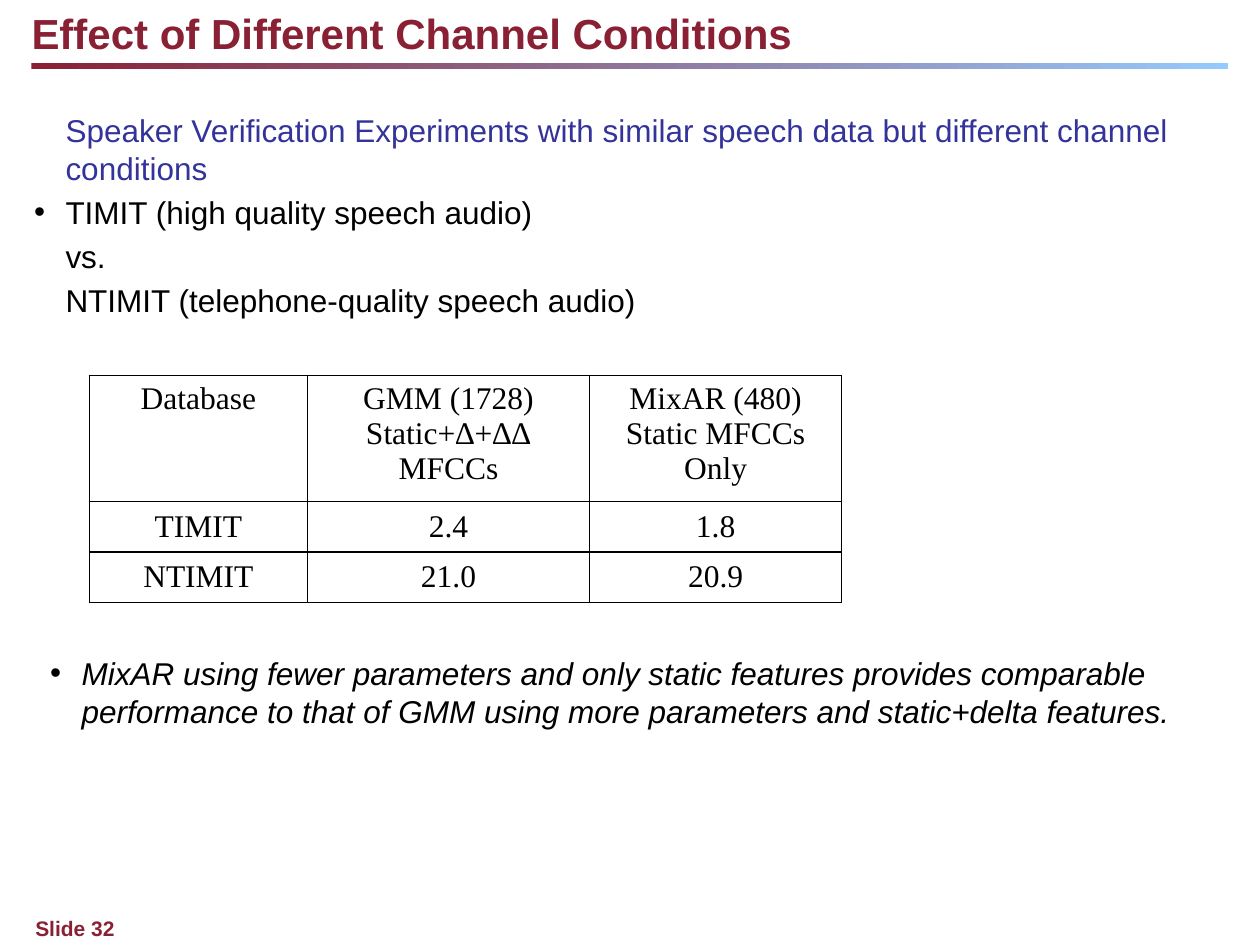
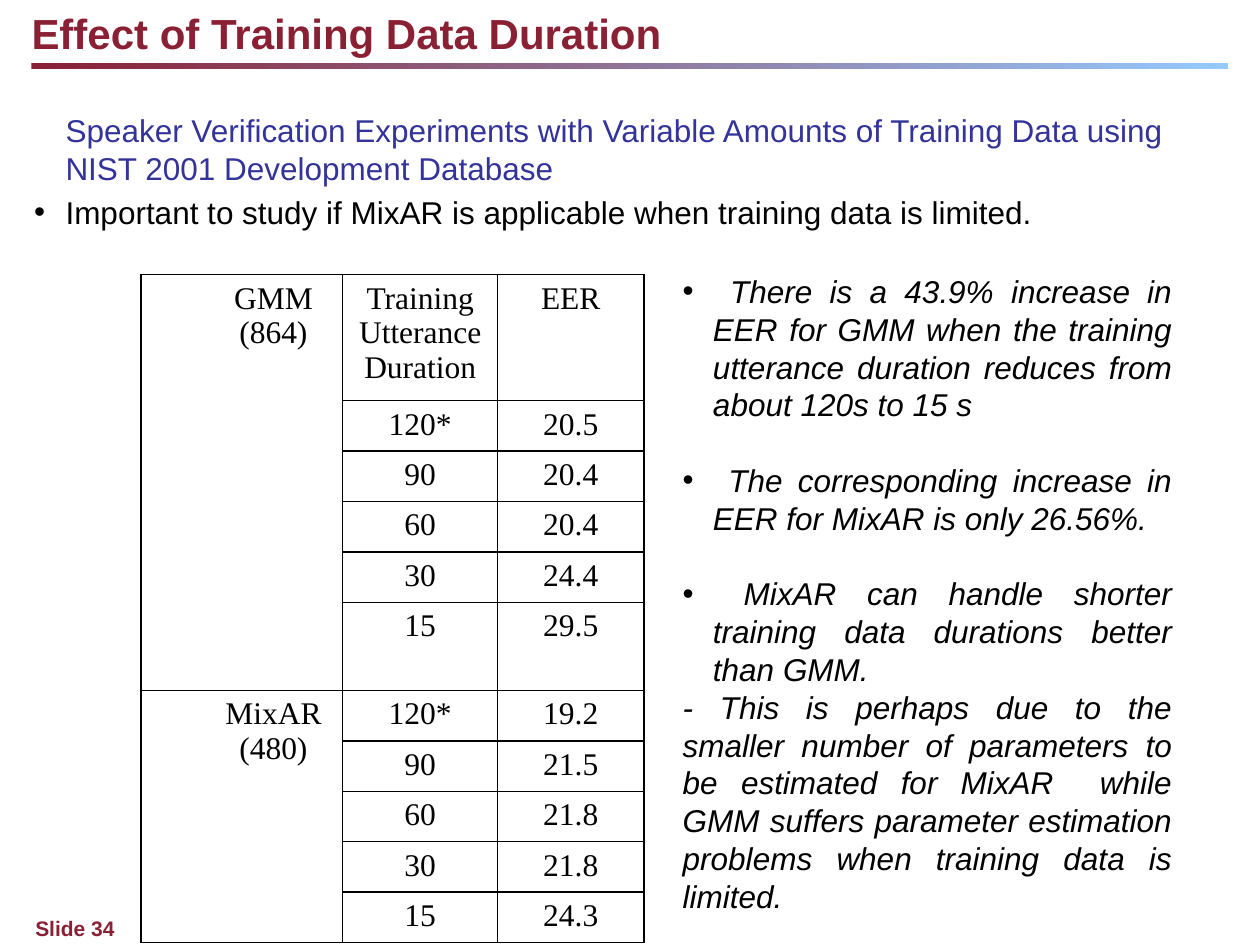
from lxml import etree
from pptx import Presentation
from pptx import util as u
from pptx.dml.color import RGBColor
from pptx.enum import shapes, text
from pptx.oxml import ns

COLORS = {"maroon": "892034", "sky": "95CAFF", "indigo": "333399", "ink": "000000"}
TITLE = {"name": "Arial", "size": u.Pt(24), "bold": True, "color": "maroon"}
FOOTER = {**TITLE, "size": u.Pt(12)}
BODY = {"name": "Arial", "size": u.Pt(18), "color": "ink"}
LEAD = {**BODY, "color": "indigo"}
REMARK = {**BODY, "italic": True}
CELL = {**BODY, "name": "Times New Roman"}
CENTER, JUSTIFY = text.PP_ALIGN.CENTER, text.PP_ALIGN.JUSTIFY


def rgb(name):
    return RGBColor.from_string(COLORS[name])


def style(para, font):
    for span in para.runs:
        for key, value in font.items():
            if key == "color":
                span.font.color.rgb = rgb(value)
            else:
                setattr(span.font, key, value)


def place(shape, box):
    for key, value in zip(("left", "top", "width", "height"), box):
        setattr(shape, key, u.Inches(value))


def set_indent(para, margin, first=0, bullet=False):
    props = para._p.get_or_add_pPr()
    props.set("marL", str(u.Inches(margin)))
    props.set("indent", str(u.Inches(first)))
    if bullet:
        face = etree.SubElement(props, ns.qn("a:buFont"))
        face.set("typeface", "Arial")
        etree.SubElement(props, ns.qn("a:buChar")).set("char", "•")
    else:
        etree.SubElement(props, ns.qn("a:buNone"))


def fill_text(shape, items, inset=True, hang=0.25, gap=0, align=None):
    """Each item is (words, font, kind, space before or None for the gap)."""
    frame = shape.text_frame
    options = {"word_wrap": True, "auto_size": text.MSO_AUTO_SIZE.NONE,
               "vertical_anchor": text.MSO_ANCHOR.TOP}
    if not inset:
        options.update({f"margin_{side}": 0 for side in ("left", "top", "right", "bottom")})
    for key, value in options.items():
        setattr(frame, key, value)
    for index, (words, font, kind, before) in enumerate(items):
        para = frame.add_paragraph() if index else frame.paragraphs[0]
        para.text = words
        bullet = kind == "bullet"
        set_indent(para, 0 if kind == "plain" else hang, -hang if bullet else 0, bullet)
        space = gap if before is None else before
        para.space_before = u.Pt(space if index else 0)
        para.alignment = align or text.PP_ALIGN.LEFT
        style(para, font)


def add_text(page, box, items, **options):
    shape = page.shapes.add_textbox(*(u.Inches(value) for value in box))
    fill_text(shape, items, **options)


def add_page(deck, title, number, intro, intro_height):
    """Title, gradient rule, opening list and footer shared by the slides."""
    page = deck.slides.add_slide(deck.slide_layouts[1])
    rule = page.shapes.add_shape(shapes.MSO_SHAPE.RECTANGLE, *map(u.Inches, (0.25, 0.5, 9.5, 0.05)))
    rule.shadow.inherit = False
    rule.line.fill.background()
    rule.fill.gradient()
    rule.fill.gradient_angle = 0
    for stop, name in zip(rule.fill.gradient_stops, ("maroon", "sky")):
        stop.color.rgb = rgb(name)

    heading, body = page.shapes.title, page.placeholders[1]
    place(heading, (0.25, 0.06, 9.42, 0.4))
    fill_text(heading, [(title, TITLE, "plain", 0)], inset=False)
    place(body, (0.27, 0.88, 9.44, intro_height))
    fill_text(body, intro, inset=False, gap=3.6)
    add_text(page, (0.28, 7.27, 8.92, 0.2),
             [(f"Slide {number}", FOOTER, "plain", 0)], inset=False)
    return page


def border(cell):
    props = cell._tc.get_or_add_tcPr()
    for index, side in enumerate(("lnL", "lnR", "lnT", "lnB")):
        line = etree.Element(ns.qn(f"a:{side}"), w=str(u.Pt(1)))
        solid = etree.SubElement(line, ns.qn("a:solidFill"))
        etree.SubElement(solid, ns.qn("a:srgbClr")).set("val", COLORS["ink"])
        props.insert(index, line)


def add_grid(page, left, top, widths, heights, rows, middle_from=None):
    """Ruled table; None leaves a cell empty for a merge."""
    frame = page.shapes.add_table(len(rows), len(widths), u.Inches(left), u.Inches(top),
                                  u.Inches(sum(widths)), u.Inches(sum(heights)))
    table = frame.table
    table.first_row = table.horz_banding = False
    for column, width in zip(table.columns, widths):
        column.width = u.Inches(width)
    for r, (height, row) in enumerate(zip(heights, rows)):
        table.rows[r].height = u.Inches(height)
        for c, words in enumerate(row):
            cell = table.cell(r, c)
            cell.fill.background()
            border(cell)
            if middle_from is not None and r >= middle_from:
                cell.vertical_anchor = text.MSO_ANCHOR.MIDDLE
            if words is None:
                continue
            cell.text = words
            for para in cell.text_frame.paragraphs:
                para.alignment = CENTER
                style(para, CELL)
    return table


def channel_slide(deck):
    page = add_page(deck, "Effect of Different Channel Conditions", 32, [
        ("Speaker Verification Experiments with similar speech data but different "
         "channel conditions", LEAD, "hung", None),
        ("TIMIT (high quality speech audio)", BODY, "bullet", None),
        ("vs.", BODY, "hung", None),
        ("NTIMIT (telephone-quality speech audio)", BODY, "hung", None)], 1.68)
    # Error rates by database
    add_grid(page, 0.71, 2.98, (1.73, 2.24, 2), (1, 0.4, 0.4), [
        ("Database", "GMM (1728)\vStatic+∆+∆∆ MFCCs", "MixAR (480)\vStatic MFCCs Only"),
        ("TIMIT", "2.4", "1.8"),
        ("NTIMIT", "21.0", "20.9")], middle_from=1)
    # Conclusion
    add_text(page, (0.3, 5.14, 9.12, 0.71), [
        ("MixAR using fewer parameters and only static features provides comparable "
         "performance to that of GMM using more parameters and static+delta features.",
         REMARK, "bullet", 0)])


def duration_slide(deck):
    page = add_page(deck, "Effect of Training Data Duration", 34, [
        ("Speaker Verification Experiments with Variable Amounts of Training Data using "
         "NIST 2001 Development Database", LEAD, "hung", None),
        ("Important to study if MixAR is applicable when training data is limited.",
         BODY, "bullet", None)], 1.33)
    # Error rates by model and utterance duration
    durations = ("120*", "90", "60", "30", "15")
    rates = {"GMM\n(864)": ("20.5", "20.4", "20.4", "24.4", "29.5"),
             "MixAR\n(480)": ("19.2", "21.5", "21.8", "21.8", "24.3")}
    rows = [[None, "Training Utterance Duration", "EER"]]
    starts = []
    for model, values in rates.items():
        starts.append(len(rows) if starts else 0)
        rows += [[None, *pair] for pair in zip(durations, values)]
        rows[starts[-1]][0] = model
    heights = [1] + [0.4] * 4 + [0.7] + [0.4] * 5
    table = add_grid(page, 1.12, 2.18, (1.6, 1.23, 1.16), heights, rows)
    for first, last in zip(starts, (starts[1] - 1, len(rows) - 1)):
        model_cell = table.cell(first, 0)
        model_cell.merge(table.cell(last, 0))
        for para in model_cell.text_frame.paragraphs:
            set_indent(para, 0, 0.5)
    # Findings
    add_text(page, (5.32, 2.11, 4.08, 5.25), [
        (" There is a 43.9% increase in EER for GMM when the training utterance duration "
         "reduces from about 120s to 15 s", REMARK, "bullet", 0),
        (" The corresponding increase in EER for MixAR is only 26.56%.", REMARK, "bullet", None),
        (" MixAR can handle shorter training data durations better than GMM.",
         REMARK, "bullet", None),
        ("- This is perhaps due to the smaller number of parameters to be estimated for "
         "MixAR  while GMM suffers parameter estimation problems when training data is "
         "limited.", REMARK, "plain", 0)], hang=0.24, gap=21.6, align=JUSTIFY)


def main():
    deck = Presentation()
    deck.slide_width, deck.slide_height = u.Inches(10), u.Inches(7.5)
    channel_slide(deck)
    duration_slide(deck)
    deck.save("out.pptx")


if __name__ == "__main__":
    main()
